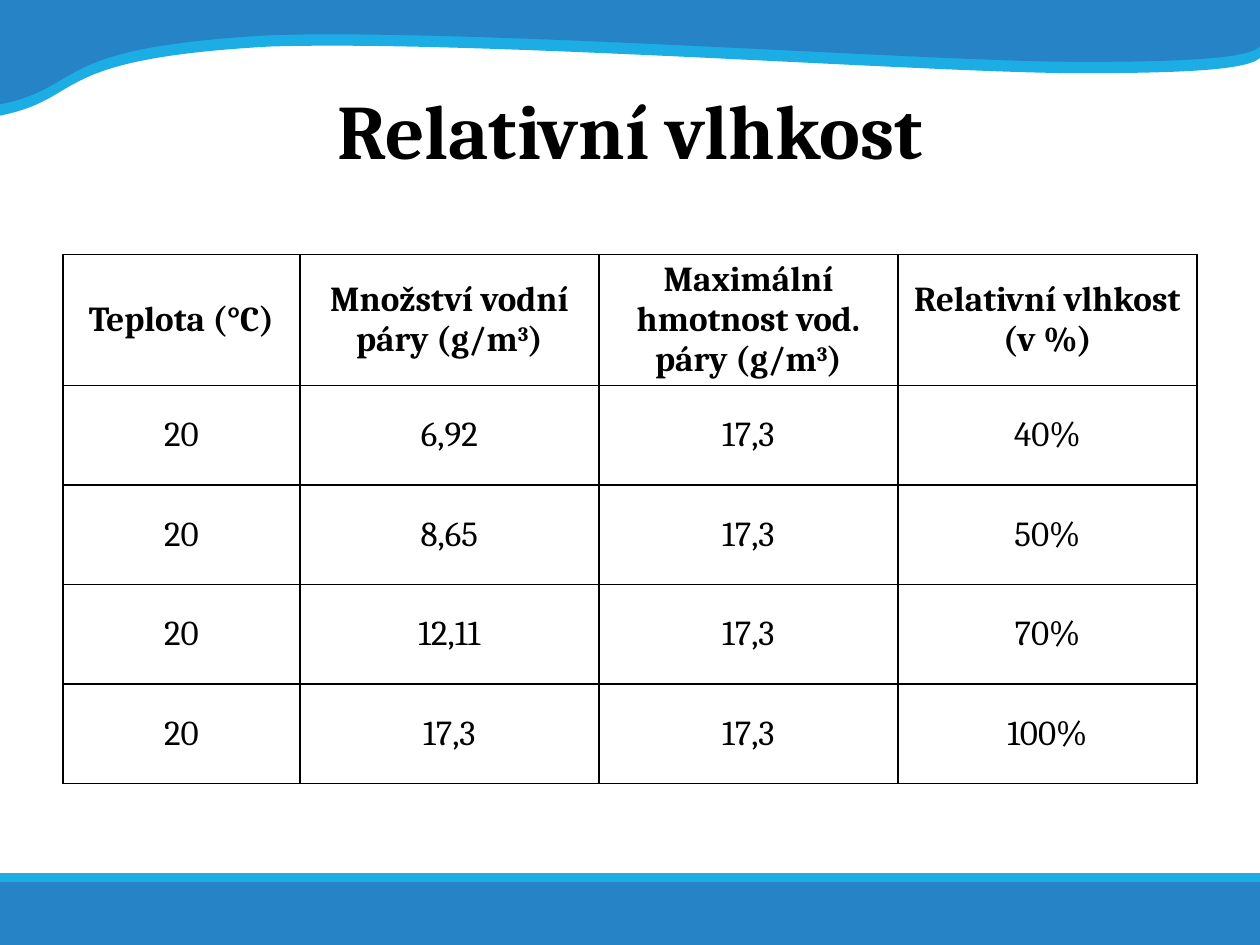
from lxml import etree
from pptx import Presentation
from pptx import util as u
from pptx.dml.color import RGBColor
from pptx.enum import shapes, text
from pptx.oxml.ns import qn

COLORS = {"deep": "2683C6", "bright": "1CADE4", "ink": "000000", "paper": "FFFFFF"}
FONT = "Cambria"

# Lower edge of the wave, right to left: two control points and an end each
WAVE_CORNERS = [(0, -0.01), (10, 0)]
WAVE_CURVES = [
    [(10, 0.12), (10, 0.25), (10, 0.37)],
    [(9.93, 0.43), (9.72, 0.5), (8.41, 0.49)],
    [(7.1, 0.47), (3.73, 0.23), (2.14, 0.28)],
    [(0.34, 0.38), (0.7, 0.69), (-0.01, 0.83)],
]

# A caret marks the superscript that follows it
HEADERS = ["Teplota (°C)", "Množství vodní páry (g/m^3)",
           "Maximální hmotnost vod. páry (g/m^3)", "Relativní vlhkost (v %)"]
ROWS = [
    ["20", "6,92", "17,3", "40%"],
    ["20", "8,65", "17,3", "50%"],
    ["20", "12,11", "17,3", "70%"],
    ["20", "17,3", "17,3", "100%"],
]
FIRST_COLUMN = 1.88
HEADER_HEIGHT, ROW_HEIGHT = 1.04, 0.79
HEADER_MARGIN, ROW_MARGIN = 0.02, 0.04


def rgb(name):
    return RGBColor.from_string(COLORS[name])


def paint(shape, color):
    shape.shadow.inherit = False
    shape.fill.solid()
    shape.fill.fore_color.rgb = rgb(color)
    shape.line.fill.background()


def style_run(span, size, bold):
    span.font.name = FONT
    span.font.size = u.Pt(size)
    span.font.bold = bold
    span.font.color.rgb = rgb("ink")


def add_wave(page, left, top, color):
    outline = WAVE_CORNERS + [point for curve in WAVE_CURVES for point in curve]
    corner, *rest = [(u.Inches(left + x), u.Inches(top + y)) for x, y in outline]
    builder = page.shapes.build_freeform(*corner)
    builder.add_line_segments(rest, close=True)
    wave = builder.convert_to_shape()
    paint(wave, color)
    # Join each three points after the straight top edge into one curve
    lines = list(wave._element.iter(qn("a:lnTo")))[1:]
    for first in range(0, 3 * len(WAVE_CURVES), 3):
        curve = etree.Element(qn("a:cubicBezTo"))
        lines[first].addprevious(curve)
        for line in lines[first:first + 3]:
            curve.append(line[0])
            line.getparent().remove(line)


def add_band(page, left, top, width, height, color):
    band = page.shapes.add_shape(shapes.MSO_SHAPE.RECTANGLE, u.Inches(left),
                                 u.Inches(top), u.Inches(width), u.Inches(height))
    paint(band, color)


def add_title(page, left, top, width, height, wording):
    box = page.shapes.add_textbox(u.Inches(left), u.Inches(top),
                                  u.Inches(width), u.Inches(height))
    frame = box.text_frame
    frame.word_wrap = True
    frame.vertical_anchor = text.MSO_ANCHOR.MIDDLE
    frame.text = wording
    para = frame.paragraphs[0]
    para.alignment = text.PP_ALIGN.CENTER
    style_run(para.runs[0], 44, True)


def add_borders(cell):
    properties = cell._tc.get_or_add_tcPr()
    for index, side in enumerate(("lnL", "lnR", "lnT", "lnB")):
        line = etree.Element(qn(f"a:{side}"), w=str(u.Pt(1)))
        fill = etree.SubElement(line, qn("a:solidFill"))
        etree.SubElement(fill, qn("a:srgbClr"), val=COLORS["ink"])
        properties.insert(index, line)


def fill_cell(cell, wording, is_header):
    cell.fill.solid()
    cell.fill.fore_color.rgb = rgb("paper")
    cell.vertical_anchor = text.MSO_ANCHOR.MIDDLE
    cell.margin_left = cell.margin_right = u.Inches(0.08)
    margin = HEADER_MARGIN if is_header else ROW_MARGIN
    cell.margin_top = cell.margin_bottom = u.Inches(margin)
    add_borders(cell)
    para = cell.text_frame.paragraphs[0]
    para.alignment = text.PP_ALIGN.CENTER
    base, _, raised = wording.partition("^")
    for index, part in enumerate((base, raised[:1], raised[1:])):
        if part:
            span = para.add_run()
            span.text = part
            style_run(span, 20, is_header)
            if index == 1:
                span.font._element.set("baseline", "30000")


def add_humidity_table(page, left, top, width, height):
    rows = [HEADERS, *ROWS]
    frame = page.shapes.add_table(len(rows), len(HEADERS), u.Inches(left),
                                  u.Inches(top), u.Inches(width), u.Inches(height))
    table = frame.table
    table.horz_banding = False
    other_column = (width - FIRST_COLUMN) / (len(HEADERS) - 1)
    for index, column in enumerate(table.columns):
        column.width = u.Inches(other_column if index else FIRST_COLUMN)
    for row_index, row in enumerate(rows):
        is_header = row_index == 0
        table.rows[row_index].height = u.Inches(HEADER_HEIGHT if is_header else ROW_HEIGHT)
        for column_index, wording in enumerate(row):
            fill_cell(table.cell(row_index, column_index), wording, is_header)


def main():
    deck = Presentation()
    deck.slide_width, deck.slide_height = u.Inches(10), u.Inches(7.5)
    page = deck.slides.add_slide(deck.slide_layouts[6])

    # Waves along the top
    add_wave(page, 0, 0.09, "bright")
    add_wave(page, 0, 0, "deep")

    # Bands along the bottom
    add_band(page, 0, 7, 10, 0.5, "deep")
    add_band(page, 0, 6.93, 10, 0.07, "bright")

    # Title and table
    add_title(page, 0.5, 0.3, 9, 1.45, "Relativní vlhkost")
    add_humidity_table(page, 0.5, 2.02, 9, HEADER_HEIGHT + len(ROWS) * ROW_HEIGHT)

    deck.save("out.pptx")


if __name__ == "__main__":
    main()
